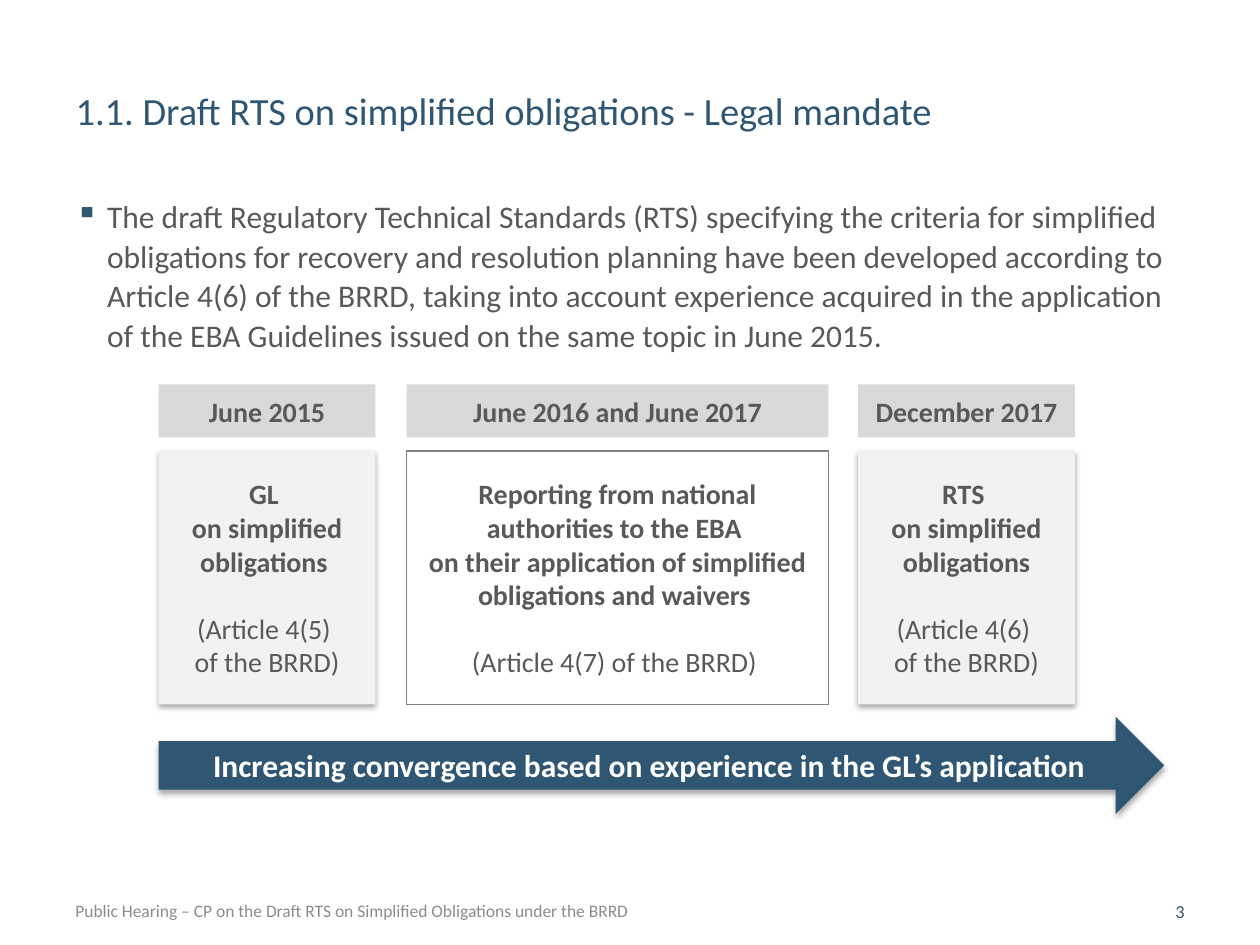
from lxml import etree
from pptx import Presentation
from pptx.dml.color import RGBColor
from pptx.enum import shapes, text
from pptx.oxml.ns import qn
from pptx.util import Cm, Pt

COLORS = {
    "navy": "2F5773",
    "body": "595959",
    "footer": "8C8C8C",
    "border": "808080",
    "header": "D9D9D9",
    "card": "F2F2F2",
    "white": "FFFFFF",
    "black": "000000",
}
RECT = shapes.MSO_SHAPE.RECTANGLE
ARROW = shapes.MSO_SHAPE.RIGHT_ARROW
LEFT, CENTER, RIGHT = text.PP_ALIGN.LEFT, text.PP_ALIGN.CENTER, text.PP_ALIGN.RIGHT
TOP, MIDDLE = text.MSO_ANCHOR.TOP, text.MSO_ANCHOR.MIDDLE


def rgb(name):
    return RGBColor.from_string(COLORS[name])


class SlideBuilder:
    font = "Calibri"

    def __init__(self, prs):
        self.s = prs.slides.add_slide(prs.slide_layouts[5])

    def add_lines(self, p, lines, size, color, bold=False, align=LEFT):
        """Add one run per line, separated by line breaks."""
        p.alignment = align
        for i, line in enumerate(lines):
            if i:
                p.add_line_break()
            r = p.add_run()
            r.text = line
            r.font.name = self.font
            r.font.size = Pt(size)
            r.font.bold = bold
            r.font.color.rgb = rgb(color)

    def frame(self, sp, anchor):
        tf = sp.text_frame
        tf.word_wrap = True
        tf.auto_size = text.MSO_AUTO_SIZE.NONE
        tf.vertical_anchor = anchor
        return tf

    def title(self, box, line):
        sp = self.s.shapes.title
        sp.left, sp.top, sp.width, sp.height = map(Cm, box)
        self.add_lines(self.frame(sp, TOP).paragraphs[0], [line], 22, "navy")

    def text_box(self, box, line, size, color, align=LEFT, anchor=MIDDLE):
        sp = self.s.shapes.add_textbox(*map(Cm, box))
        p = self.frame(sp, anchor).paragraphs[0]
        self.add_lines(p, [line], size, color, align=align)
        return p

    def bullet(self, box, line):
        p = self.text_box(box, line, 18, "body", anchor=TOP)
        p.line_spacing = 1.05
        p.space_after = Pt(6)
        pPr = p._p.get_or_add_pPr()
        pPr.set("marL", str(Cm(0.64)))
        pPr.set("indent", str(-Cm(0.64)))
        color = etree.SubElement(pPr, qn("a:buClr"))
        etree.SubElement(color, qn("a:srgbClr"), val=COLORS["navy"])
        etree.SubElement(pPr, qn("a:buChar"), char="▪")

    def shape(self, kind, box, fill=None, line=None, shadow=False):
        sp = self.s.shapes.add_shape(kind, *map(Cm, box))
        sp.shadow.inherit = False
        if fill:
            sp.fill.solid()
            sp.fill.fore_color.rgb = rgb(fill)
        else:
            sp.fill.background()
        if line:
            sp.line.color.rgb = rgb(line)
            sp.line.width = Pt(0.75)
        else:
            sp.line.fill.background()
        if shadow:
            self.drop_shadow(sp)
        return self.frame(sp, MIDDLE)

    def drop_shadow(self, sp):
        effects = sp._element.spPr.find(qn("a:effectLst"))
        outer = etree.SubElement(
            effects, qn("a:outerShdw"), blurRad=str(Pt(3.15)),
            dist=str(Pt(1.8)), dir="5400000", rotWithShape="0")
        color = etree.SubElement(outer, qn("a:srgbClr"), val=COLORS["black"])
        etree.SubElement(color, qn("a:alpha"), val="35000")

    def header(self, box, line):
        tf = self.shape(RECT, box, fill="header")
        self.add_lines(tf.paragraphs[0], [line], 16, "body", True, CENTER)

    def card(self, box, heading, article, **style):
        tf = self.shape(RECT, box, **style)
        self.add_lines(tf.paragraphs[0], heading, 16, "body", True, CENTER)
        p = tf.add_paragraph()
        p.space_before = Pt(19.2)
        self.add_lines(p, article, 16, "body", False, CENTER)

    def arrow(self, box, line):
        tf = self.shape(ARROW, box, fill="navy", shadow=True)
        self.add_lines(tf.paragraphs[0], [line], 18, "white", True, CENTER)


def main():
    prs = Presentation()
    prs.slide_width, prs.slide_height = Cm(25.4), Cm(19.05)
    b = SlideBuilder(prs)

    b.title((1.27, 1.63, 20.4, 1.55),
            "1.1. Draft RTS on simplified obligations - Legal mandate")
    b.bullet((1.27, 3.81, 22.86, 13.61),
             "The draft Regulatory Technical Standards (RTS) specifying the "
             "criteria for simplified obligations for recovery and resolution "
             "planning have been developed according to Article 4(6) of the "
             "BRRD, taking into account experience acquired in the application "
             "of the EBA Guidelines issued on the same topic in June 2015.")

    filled = {"fill": "card", "shadow": True}
    outlined = {"line": "border"}
    stages = [
        (3.2, 4.37, "June 2015", ["GL ", "on simplified obligations "],
         ["(Article 4(5) ", "of the BRRD)"], filled),
        (8.2, 8.5, "June 2016 and June 2017",
         ["Reporting from national authorities to the EBA ",
          "on their application of simplified obligations and waivers "],
         ["(Article 4(7) of the BRRD) "], outlined),
        (17.3, 4.37, "December 2017", ["RTS ", "on simplified obligations"],
         ["(Article 4(6) ", "of the BRRD)"], filled),
    ]
    for left, width, date, heading, article, style in stages:
        b.header((left, 7.75, width, 1.07), date)
        b.card((left, 9.09, width, 5.11), heading, article, **style)

    b.arrow((3.2, 14.45, 20.27, 1.96),
            "Increasing convergence based on experience in the GL’s application")

    b.text_box((1.27, 18.06, 13.67, 0.61),
               "Public Hearing – CP on the Draft RTS on Simplified Obligations "
               "under the BRRD", 10, "footer")
    b.text_box((21.97, 18.06, 2.16, 0.61), "3", 10.5, "navy", RIGHT)
    prs.save("out.pptx")


if __name__ == "__main__":
    main()
